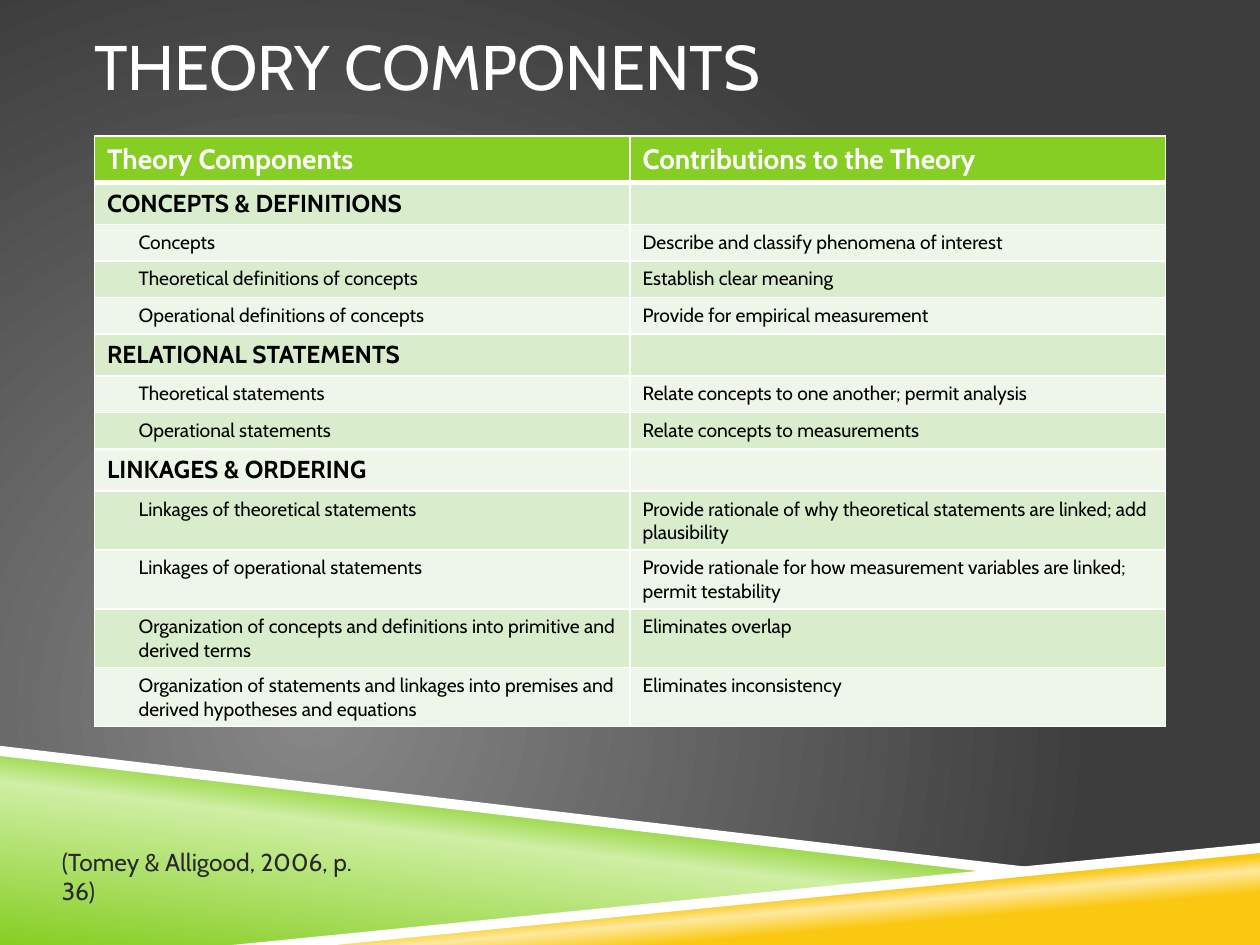
"""Build the Theory Components slide: a banded table above green and gold ribbons."""
from lxml.etree import SubElement
from pptx import Presentation
from pptx.dml.color import RGBColor as RGB
from pptx.enum.text import MSO_ANCHOR as Anchor
from pptx.oxml import parse_xml as to_xml
from pptx.oxml.ns import nsdecls, qn
from pptx.util import Inches, Pt

HUE = {
    "white": "FFFFFF", "black": "000000", "ink": "282828",
    "green": "86CE24", "lime": "CFEFA4", "gold": "FAC810", "cream": "FDE99F",
    "band": "D9EDCD", "pale": "EDF6E8", "gray": "878787", "dark": "3D3D3D",
}
FACE = "Cabin"


def blend(old, stops, shade):
    """Swap a solid fill element for a gradient."""
    marks = "".join(
        f'<a:gs pos="{pos * 1000}"><a:srgbClr val="{HUE[hue]}"/></a:gs>' for pos, hue in stops)
    grad = to_xml(f'<a:gradFill {nsdecls("a")} rotWithShape="1">'
                  f'<a:gsLst>{marks}</a:gsLst>{shade}</a:gradFill>')
    old.getparent().replace(old, grad)


def style(font, size, hue, bold=False):
    """Apply the format values to a font."""
    for key, val in {"name": FACE, "size": Pt(size), "bold": bold}.items():
        setattr(font, key, val)
    font.color.rgb = RGB.from_string(HUE[hue])


deck = Presentation()
deck.slide_width, deck.slide_height = Inches(10), Inches(7.5)
col, row = deck.slide_width / 100, deck.slide_height / 100
slide = deck.slides.add_slide(deck.slide_layouts[6])

slide.background.fill.solid()
blend(next(slide.element.iter(qn("a:solidFill"))), [(0, "gray"), (100, "dark")],
      '<a:path path="circle"><a:fillToRect l="50000" t="100000" r="100000" b="50000"/></a:path>')

ribbons = [
    ([(0, 79.6), (79.2, 92.27), (20, 100), (0, 100)],
     [(0, "green"), (52, "lime"), (66, "green")], 277),
    ([(19.8, 100), (100, 89.6), (100, 100)],
     [(28, "gold"), (40, "cream"), (48, "gold")], 265),
    ([(0, 78.93), (0, 80), (79, 92.4), (83.2, 92)], None, 0),
    ([(100, 89.2), (18.4, 100), (26.6, 100), (100, 90.27)], None, 0),
]
for points, stops, angle in ribbons:
    dots = [(x * col, y * row) for x, y in points]
    pen = slide.shapes.build_freeform(*dots[0])
    pen.add_line_segments(dots[1:], close=True)
    shape = pen.convert_to_shape()
    shape.shadow.inherit = False
    shape.line.fill.background()
    shape.fill.solid()
    shape.fill.fore_color.rgb = RGB.from_string(HUE["white"])
    if stops:
        blend(shape.element.spPr.find(qn("a:solidFill")), stops,
              f'<a:lin ang="{angle * 60000}" scaled="0"/>')

labels = [
    ("THEORY COMPONENTS", (7.5, 1.07, 85, 11.6), 36, "white", Anchor.MIDDLE, 0),
    ("(Tomey & Alligood, 2006, p. 36)", (4.2, 88.93, 25.9, 6.67), 14, "ink", Anchor.TOP, 0.07),
]
for text, (x, y, wide, high), size, hue, anchor, inset in labels:
    box = slide.shapes.add_textbox(
        int(x * col), int(y * row), int(wide * col), int(high * row)).text_frame
    for key, val in {"word_wrap": True, "vertical_anchor": anchor, "margin_right": 0,
                     "margin_left": Inches(inset)}.items():
        setattr(box, key, val)
    run = box.paragraphs[0].add_run()
    run.text = text
    style(run.font, size, hue)

rows = [
    ("Theory Components", "Contributions to the Theory"),
    ("CONCEPTS & DEFINITIONS", ""),
    ("Concepts", "Describe and classify phenomena of interest"),
    ("Theoretical definitions of concepts", "Establish clear meaning"),
    ("Operational definitions of concepts", "Provide for empirical measurement"),
    ("RELATIONAL STATEMENTS", ""),
    ("Theoretical statements", "Relate concepts to one another; permit analysis"),
    ("Operational statements", "Relate concepts to measurements"),
    ("LINKAGES & ORDERING", ""),
    ("Linkages of theoretical statements",
     "Provide rationale of why theoretical statements are linked; add plausibility"),
    ("Linkages of operational statements",
     "Provide rationale for how measurement variables are linked; permit testability"),
    ("Organization of concepts and definitions into primitive and derived terms",
     "Eliminates overlap"),
    ("Organization of statements and linkages into premises and derived hypotheses and equations",
     "Eliminates inconsistency"),
]
table = slide.shapes.add_table(
    len(rows), 2, int(7.5 * col), int(14.4 * row), int(85 * col), int(62.4 * row)).table
for i, pair in enumerate(rows):
    head, group = i == 0, not pair[1]
    size = 16 if head else 14 if group else 11
    tall = 0.35 if head else 0.31 if group else 0.44 if i > 8 else 0.29
    table.rows[i].height = Inches(tall)
    for j, text in enumerate(pair):
        cell = table.cell(i, j)
        cell.fill.solid()
        tint = "green" if head else "band" if i % 2 else "pale"
        cell.fill.fore_color.rgb = RGB.from_string(HUE[tint])
        para = cell.text_frame.paragraphs[0]
        if text:
            run = para.add_run()
            run.text = text
            style(run.font, size, "white" if head else "black", head or group)
        else:
            SubElement(para._p, qn("a:endParaRPr"), sz=str(size * 100))
        if j == 0 and not head and not group:
            para._p.get_or_add_pPr().set("marL", str(Inches(0.25)))
        for k, side in enumerate("LRTB"):
            thick = 3 if (i, side) in [(0, "B"), (1, "T")] else 1
            edge = to_xml(f'<a:ln{side} {nsdecls("a")} w="{Pt(thick)}"><a:solidFill>'
                          f'<a:srgbClr val="{HUE["white"]}"/></a:solidFill></a:ln{side}>')
            cell._tc.get_or_add_tcPr().insert(k, edge)

deck.save("out.pptx")
